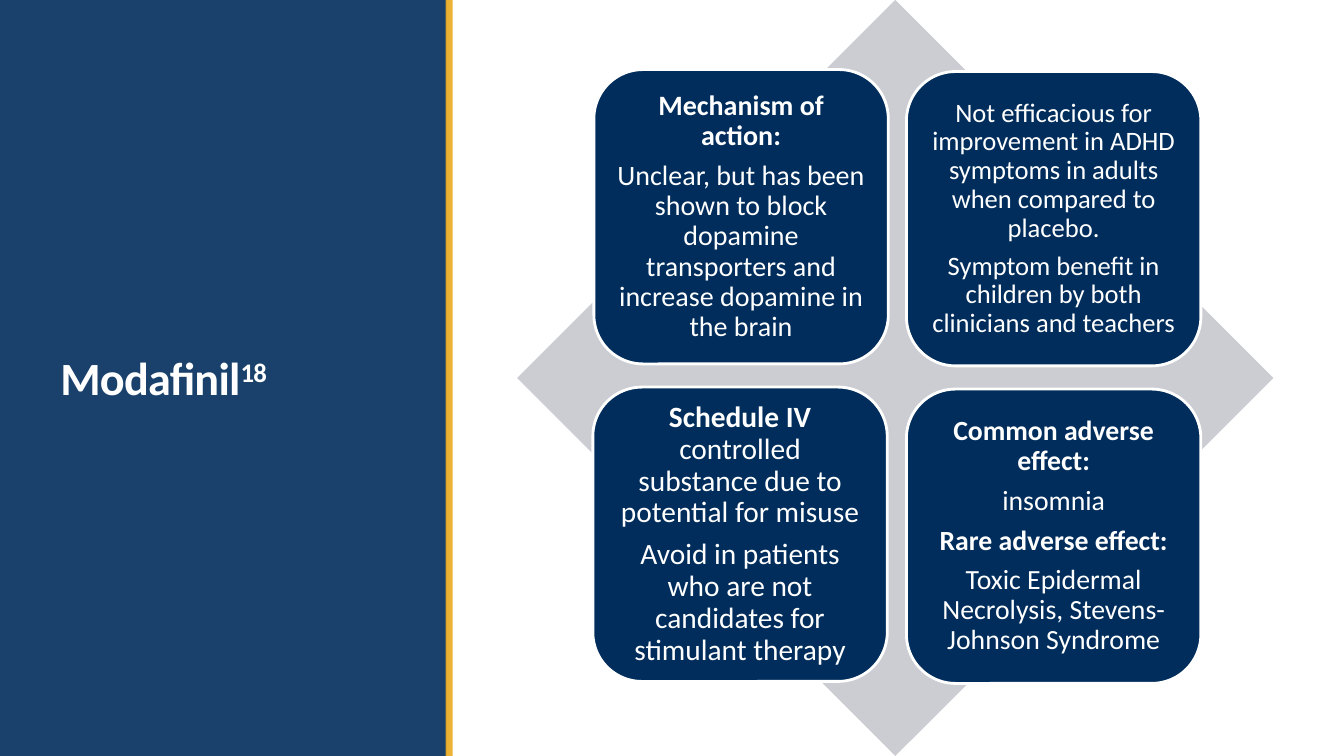
from lxml import etree
from pptx import Presentation
from pptx.dml.color import RGBColor
from pptx.enum.shapes import MSO_SHAPE as Shape
from pptx.enum.text import MSO_ANCHOR as Anchor, PP_ALIGN as Align
from pptx.oxml.ns import qn
from pptx.util import Inches, Pt

COLORS = {"navy": "002D5B", "gold": "E9AA21", "gray": "CCCDD2", "white": "FFFFFF"}
CARD_SIZE = 2.92

# Each card: left, top, text size, inset, paragraphs of (text, bold) runs
CARDS = [
    (5.88, 3.84, 21, 0.09, [
        [("Schedule IV ", True),
         ("controlled substance due to potential for misuse", False)],
        [("Avoid in patients who are not candidates for stimulant therapy", False)],
    ]),
    (8.99, 0.71, 19, 0.08, [
        [("Not efficacious for improvement in ADHD symptoms in adults "
          "when compared to placebo.", False)],
        [("Symptom benefit in children by both clinicians and teachers", False)],
    ]),
    (5.89, 0.69, 20, 0.08, [
        [("Mechanism of action:", True)],
        [("Unclear, but has been shown to block dopamine transporters "
          "and increase dopamine in the brain", False)],
    ]),
    (8.99, 3.86, 19.8, 0.08, [
        [("Common adverse effect:", True)],
        [("insomnia", False)],
        [("Rare adverse effect:", True)],
        [("Toxic Epidermal Necrolysis, Stevens-Johnson Syndrome", False)],
    ]),
]


def rgb(name):
    return RGBColor.from_string(COLORS[name])


def set_all(target, **values):
    for key, value in values.items():
        setattr(target, key, value)


def add_run(paragraph, text, size, bold):
    run = paragraph.add_run()
    run.text = text
    set_all(run.font, name="Calibri", size=Pt(size), bold=bold)
    run.font.color.rgb = rgb("white")
    return run


def add_block(slide, kind, box, color, opacity=None):
    """Add a filled shape without outline; opacity is in percent."""
    block = slide.shapes.add_shape(kind, *map(Inches, box))
    block.shadow.inherit = False
    block.fill.solid()
    block.fill.fore_color.rgb = rgb(color)
    block.line.fill.background()
    if opacity is not None:
        fill_color = block.fill._xPr.find(".//" + qn("a:srgbClr"))
        etree.SubElement(fill_color, qn("a:alpha"), val=str(opacity * 1000))
    return block


def add_title_panel(slide, left, top, width, height):
    add_block(slide, Shape.RECTANGLE, (left, top, width, height), "navy", 90)
    add_block(slide, Shape.RECTANGLE, (left + width - 0.01, top, 0.07, height), "gold", 90)

    title = slide.shapes.add_textbox(
        *map(Inches, (left + 0.5, top + 1.57, 3.5, 2.5))).text_frame
    set_all(title, word_wrap=True, vertical_anchor=Anchor.BOTTOM)
    line = title.paragraphs[0]
    line.line_spacing = 0.85
    drug = add_run(line, "Modafinil", 33, True)
    reference = add_run(line, "18", 33, True)
    for run in (drug, reference):
        run.font._element.set("spc", "-50")
    reference.font._element.set("baseline", "30000")


def add_card(slide, left, top, size, inset, paragraphs):
    card = add_block(slide, Shape.ROUNDED_RECTANGLE,
                     (left, top, CARD_SIZE, CARD_SIZE), "navy")
    card.line.color.rgb = rgb("white")
    card.line.width = Pt(2)
    frame = card.text_frame
    set_all(frame, word_wrap=True, vertical_anchor=Anchor.MIDDLE,
            **{f"margin_{side}": Inches(inset)
               for side in ("left", "top", "right", "bottom")})
    for index, runs in enumerate(paragraphs):
        paragraph = frame.add_paragraph() if index else frame.paragraphs[0]
        set_all(paragraph, alignment=Align.CENTER, line_spacing=0.9,
                space_after=Pt(round(size * 0.35, 1)))
        for text, bold in runs:
            add_run(paragraph, text, size, bold)


def add_matrix(slide, left, top, side):
    """Add the diamond with its four cards, placed from its top left corner."""
    add_block(slide, Shape.DIAMOND, (left, top, side, side), "gray")
    for card_left, card_top, *content in CARDS:
        add_card(slide, left + card_left - 5.13, top + card_top, *content)


def main():
    deck = Presentation()
    set_all(deck, slide_width=Inches(13.33), slide_height=Inches(7.5))
    slide = deck.slides.add_slide(deck.slide_layouts[6])
    add_title_panel(slide, 0, 0, 4.43, 7.5)
    add_matrix(slide, 5.13, 0, 7.5)
    deck.save("out.pptx")


if __name__ == "__main__":
    main()
